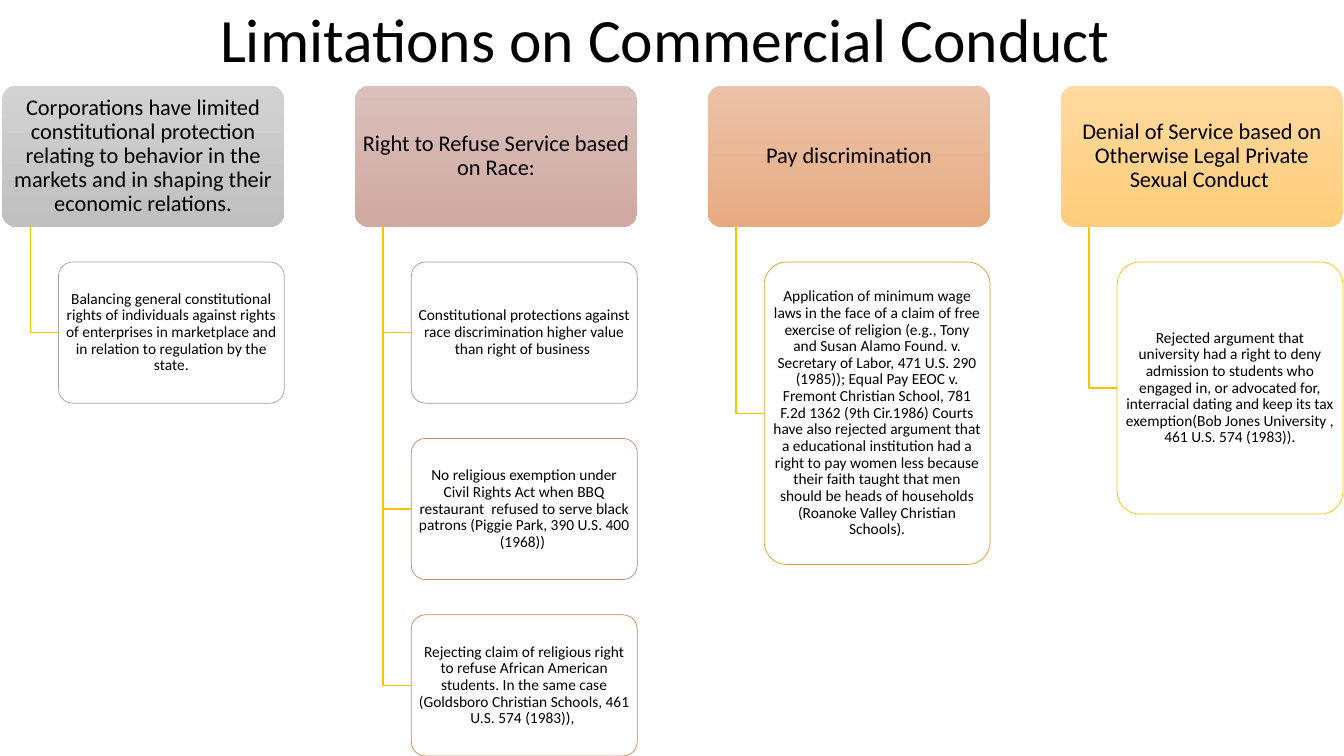
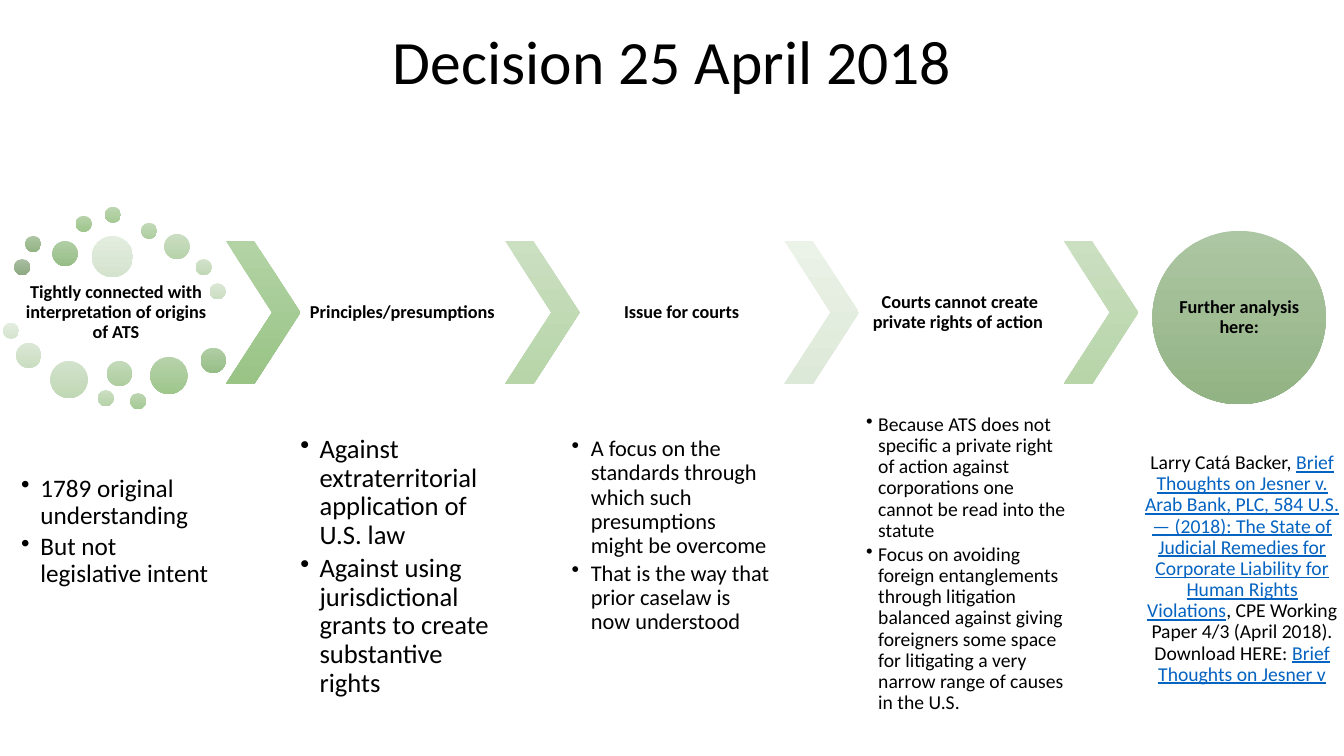
"""Build two slides on limits of commercial conduct and the decision of 25 April 2018."""
import pptx
import pptx.util
import pptx.dml.color
import pptx.enum.shapes
import pptx.enum.text
import lxml.etree

Inches = pptx.util.Inches
Pt = pptx.util.Pt
RGBColor = pptx.dml.color.RGBColor
SHAPE = pptx.enum.shapes.MSO_SHAPE
ALIGN = pptx.enum.text.PP_ALIGN
ANCHOR = pptx.enum.text.MSO_ANCHOR

FONT = "Calibri"
BLACK = RGBColor(0x00, 0x00, 0x00)
WHITE = RGBColor(0xFF, 0xFF, 0xFF)
GOLD = RGBColor(0xFF, 0xC0, 0x00)
LINK = RGBColor(0x05, 0x63, 0xC1)
GRAY = RGBColor(0xA5, 0xA5, 0xA5)
ROSE = RGBColor(0xB5, 0x92, 0x8A)
CLAY = RGBColor(0xC0, 0x8A, 0x6C)
COPPER = RGBColor(0xD2, 0x8A, 0x4B)
AMBER = RGBColor(0xE7, 0x9A, 0x27)
GRAY_SHADE = (RGBColor(0xD2, 0xD2, 0xD2), RGBColor(0xC0, 0xC0, 0xC0))
ROSE_SHADE = (RGBColor(0xDB, 0xC0, 0xBB), RGBColor(0xD0, 0xA9, 0xA1))
ORANGE_SHADE = (RGBColor(0xEB, 0xC2, 0xA8), RGBColor(0xE7, 0xAB, 0x82))
GOLD_SHADE = (RGBColor(0xFF, 0xD9, 0x9E), RGBColor(0xFF, 0xCE, 0x7C))
GREEN_SHADES = [
    (RGBColor(0xAA, 0xBE, 0xA2), RGBColor(0x8D, 0xA9, 0x82)),
    (RGBColor(0xAD, 0xC6, 0xA3), RGBColor(0x92, 0xB3, 0x84)),
    (RGBColor(0xB1, 0xCE, 0xA5), RGBColor(0x97, 0xBE, 0x87)),
    (RGBColor(0xB7, 0xD2, 0xAA), RGBColor(0x9E, 0xC6, 0x8C)),
    (RGBColor(0xBD, 0xD6, 0xB1), RGBColor(0xA5, 0xCA, 0x95)),
    (RGBColor(0xC3, 0xDA, 0xB9), RGBColor(0xAE, 0xCE, 0x9F)),
    (RGBColor(0xCB, 0xDE, 0xC2), RGBColor(0xB7, 0xD3, 0xAA)),
    (RGBColor(0xD2, 0xE2, 0xCB), RGBColor(0xC0, 0xD8, 0xB5)),
    (RGBColor(0xDB, 0xE7, 0xD5), RGBColor(0xCA, 0xDE, 0xC2)),
    (RGBColor(0xE3, 0xED, 0xDF), RGBColor(0xD4, 0xE3, 0xCE)),
]
CHEVRON_DARK = (RGBColor(0xB3, 0xD3, 0xA5), RGBColor(0x99, 0xC4, 0x86))
CHEVRON_MID = (RGBColor(0xCB, 0xDF, 0xC1), RGBColor(0xB7, 0xD5, 0xA9))
CHEVRON_PALE = (RGBColor(0xEB, 0xF2, 0xE8), RGBColor(0xDD, 0xE9, 0xD8))


def add_shaded(slide, kind, left, top, width, height, shade):
    shape = slide.shapes.add_shape(kind, Inches(left), Inches(top), Inches(width), Inches(height))
    shape.shadow.inherit = False
    shape.line.fill.background()
    shape.fill.gradient()
    shape.fill.gradient_angle = 270
    for stop, position, color in zip(shape.fill.gradient_stops, (0, 1), shade):
        stop.position = position
        stop.color.rgb = color
    return shape


def write(shape, paragraphs, size, margin=0.02, bold=False, bullet_indent=0):
    frame = shape.text_frame
    frame.word_wrap = True
    frame.margin_left = frame.margin_right = Inches(margin)
    frame.margin_top = frame.margin_bottom = Inches(margin)
    frame.vertical_anchor = ANCHOR.TOP if bullet_indent else ANCHOR.MIDDLE
    for index, text in enumerate(paragraphs):
        paragraph = frame.add_paragraph() if index else frame.paragraphs[0]
        paragraph.text = text
        paragraph.alignment = ALIGN.LEFT if bullet_indent else ALIGN.CENTER
        paragraph.line_spacing = 0.9
        if bullet_indent:
            properties = paragraph._p.get_or_add_pPr()
            properties.set("marL", str(Inches(bullet_indent)))
            properties.set("indent", str(-Inches(bullet_indent)))
            bullet = lxml.etree.SubElement(properties, pptx.oxml.ns.qn("a:buChar"))
            bullet.set("char", "•")
            paragraph.space_after = Pt(size * 0.15)
        paragraph.font.name = FONT
        paragraph.font.size = Pt(size)
        paragraph.font.bold = bold
        paragraph.font.color.rgb = BLACK


presentation = pptx.Presentation()
presentation.slide_width = Inches(13.33)
presentation.slide_height = Inches(7.5)

slides = []
for heading, top, height in [
    ("Limitations on Commercial Conduct ", 0, 0.85),
    ("Decision 25 April 2018", 0.15, 0.99),
]:
    slide = presentation.slides.add_slide(presentation.slide_layouts[5])
    title = slide.shapes.title
    title.left, title.top = Inches(0.92), Inches(top)
    title.width, title.height = Inches(11.5), Inches(height)
    write(title, [heading], 44, margin=0.05)
    title.text_frame.auto_size = pptx.enum.text.MSO_AUTO_SIZE.NONE
    slides.append(slide)
limits, decision = slides

topics = [
    ("Corporations have limited constitutional protection relating to behavior in the markets "
     "and in shaping their economic relations.", GRAY_SHADE, [
         (1.4, GRAY, "Balancing general constitutional rights of individuals against rights of "
          "enterprises in marketplace and in relation to regulation by the state."),
     ]),
    ("Right to Refuse Service based on Race:", ROSE_SHADE, [
        (1.4, ROSE, "Constitutional protections against race discrimination higher value than "
         "right of business "),
        (1.4, CLAY, "No religious exemption under Civil Rights Act when BBQ restaurant  refused "
         "to serve black patrons (Piggie Park, 390 U.S. 400 (1968)) "),
        (1.4, COPPER, "Rejecting claim of religious right to refuse African American students. "
         "In the same case (Goldsboro Christian Schools, 461 U.S. 574 (1983)), "),
    ]),
    ("Pay discrimination", ORANGE_SHADE, [
        (3, AMBER, "Application of minimum wage laws in the face of a claim of free exercise of "
         "religion (e.g., Tony and Susan Alamo Found. v. Secretary of Labor, 471 U.S. 290 "
         "(1985)); Equal Pay EEOC v. Fremont Christian School, 781 F.2d 1362 (9th Cir.1986) "
         "Courts have also rejected argument that a educational institution had a right to pay "
         "women less because their faith taught that men should be heads of households "
         "(Roanoke Valley Christian Schools)."),
    ]),
    ("Denial of Service based on Otherwise Legal Private Sexual Conduct ", GOLD_SHADE, [
        (2.5, GOLD, "Rejected argument that university had a right to deny admission to students "
         "who engaged in, or advocated for, interracial dating and keep its tax "
         "exemption(Bob Jones University , 461 U.S. 574 (1983))."),
    ]),
]
HEAD_TOP, HEAD_HEIGHT, GAP = 0.85, 1.4, 0.35
head_bottom = HEAD_TOP + HEAD_HEIGHT
for column, (topic, shade, cases) in enumerate(topics):
    left = 0.02 + 3.5 * column
    head = add_shaded(limits, SHAPE.ROUNDED_RECTANGLE, left, HEAD_TOP, 2.8, HEAD_HEIGHT, shade)
    head.adjustments[0] = 0.1
    write(head, [topic], 16, margin=0.03)
    stem, case_left = left + 0.28, left + 0.56
    case_top = head_bottom + GAP
    for height, outline, text in cases:
        middle = case_top + height / 2
        outline_path = limits.shapes.build_freeform(Inches(stem), Inches(head_bottom))
        outline_path.add_line_segments(
            [(Inches(stem), Inches(middle)), (Inches(case_left), Inches(middle))], close=False)
        branch = outline_path.convert_to_shape()
        branch.shadow.inherit = False
        branch.fill.background()
        branch.line.color.rgb = GOLD
        branch.line.width = Pt(1)
        case = limits.shapes.add_shape(
            SHAPE.ROUNDED_RECTANGLE, Inches(case_left), Inches(case_top), Inches(2.24), Inches(height))
        case.adjustments[0] = 0.1
        case.shadow.inherit = False
        case.fill.solid()
        case.fill.fore_color.rgb = WHITE
        case.line.color.rgb = outline
        case.line.width = Pt(0.5)
        write(case, [text], 11)
        case_top += height + GAP

dots = [
    (0.14, 2.57, 0.16), (0.25, 2.34, 0.16), (0.52, 2.39, 0.25), (0.75, 2.14, 0.16),
    (1.04, 2.05, 0.16), (1.4, 2.21, 0.16), (1.63, 2.32, 0.25), (1.94, 2.57, 0.16),
    (2.08, 2.81, 0.16), (0.91, 2.34, 0.41), (0.03, 3.2, 0.16), (0.16, 3.4, 0.25),
    (0.5, 3.58, 0.37), (0.97, 3.87, 0.16), (1.06, 3.58, 0.25), (1.29, 3.9, 0.16),
    (1.49, 3.54, 0.37), (1.99, 3.45, 0.25),
]
for (left, top, diameter), shade in zip(dots, GREEN_SHADES + GREEN_SHADES[:1:-1]):
    add_shaded(decision, SHAPE.OVAL, left, top, diameter, diameter, shade)

STEP_TOP, STEP_HEIGHT = 2.39, 1.42
for index, shade in enumerate([CHEVRON_DARK, CHEVRON_MID, CHEVRON_PALE, CHEVRON_MID]):
    chevron = add_shaded(
        decision, SHAPE.CHEVRON, 2.24 + 2.77 * index, STEP_TOP, 0.74, STEP_HEIGHT, shade)
    chevron.adjustments[0] = 0.62

steps = [
    (0.14, "Tightly connected with interpretation of origins of ATS", 0.19, 4.7, 18, 0.19,
     ["1789 original understanding", "But not legislative intent"]),
    (2.98, "Principles/presumptions", 2.96, 4.3, 19, 0.19,
     ["Against extraterritorial application of U.S. law",
      "Against using jurisdictional grants to create substantive rights"]),
    (5.75, "Issue for courts", 5.65, 4.32, 16, 0.19,
     ["A focus on the standards through which such presumptions might be overcome",
      "That is the way that prior caselaw is now understood"]),
    (8.51, "Courts cannot create private rights of action ", 8.57, 4.09, 14, 0.12,
     ["Because ATS does not specific a private right of action against corporations one cannot "
      "be read into the statute",
      "Focus on avoiding foreign entanglements through litigation balanced against giving "
      "foreigners some space for litigating a very narrow range of causes in the U.S."]),
]
for step_left, step, points_left, points_top, size, indent, points in steps:
    step_label = decision.shapes.add_textbox(
        Inches(step_left), Inches(STEP_TOP), Inches(2.02), Inches(STEP_HEIGHT))
    write(step_label, [step], 13, bold=True)
    details = decision.shapes.add_textbox(
        Inches(points_left), Inches(points_top), Inches(2.02), Inches(7.34 - points_top))
    write(details, points, size, bullet_indent=indent)

analysis = add_shaded(decision, SHAPE.OVAL, 11.43, 2.29, 1.72, 1.72, GREEN_SHADES[1])
write(analysis, ["Further analysis here:"], 13, margin=0, bold=True)

citation = decision.shapes.add_textbox(Inches(11.31), Inches(4.15), Inches(2.02), Inches(2.99))
write(citation, [""], 14)
for text, linked in [
    ("Larry Catá Backer, ", False),
    ("Brief Thoughts on Jesner v. Arab Bank, PLC, 584 U.S. — (2018): The State of Judicial "
     "Remedies for Corporate Liability for Human Rights Violations", True),
    (", CPE Working Paper 4/3 (April 2018). Download HERE: ", False),
    ("Brief Thoughts on Jesner v", True),
]:
    run = citation.text_frame.paragraphs[0].add_run()
    run.text = text
    if linked:
        run.font.color.rgb = LINK
        run.font.underline = True

presentation.save("out.pptx")
